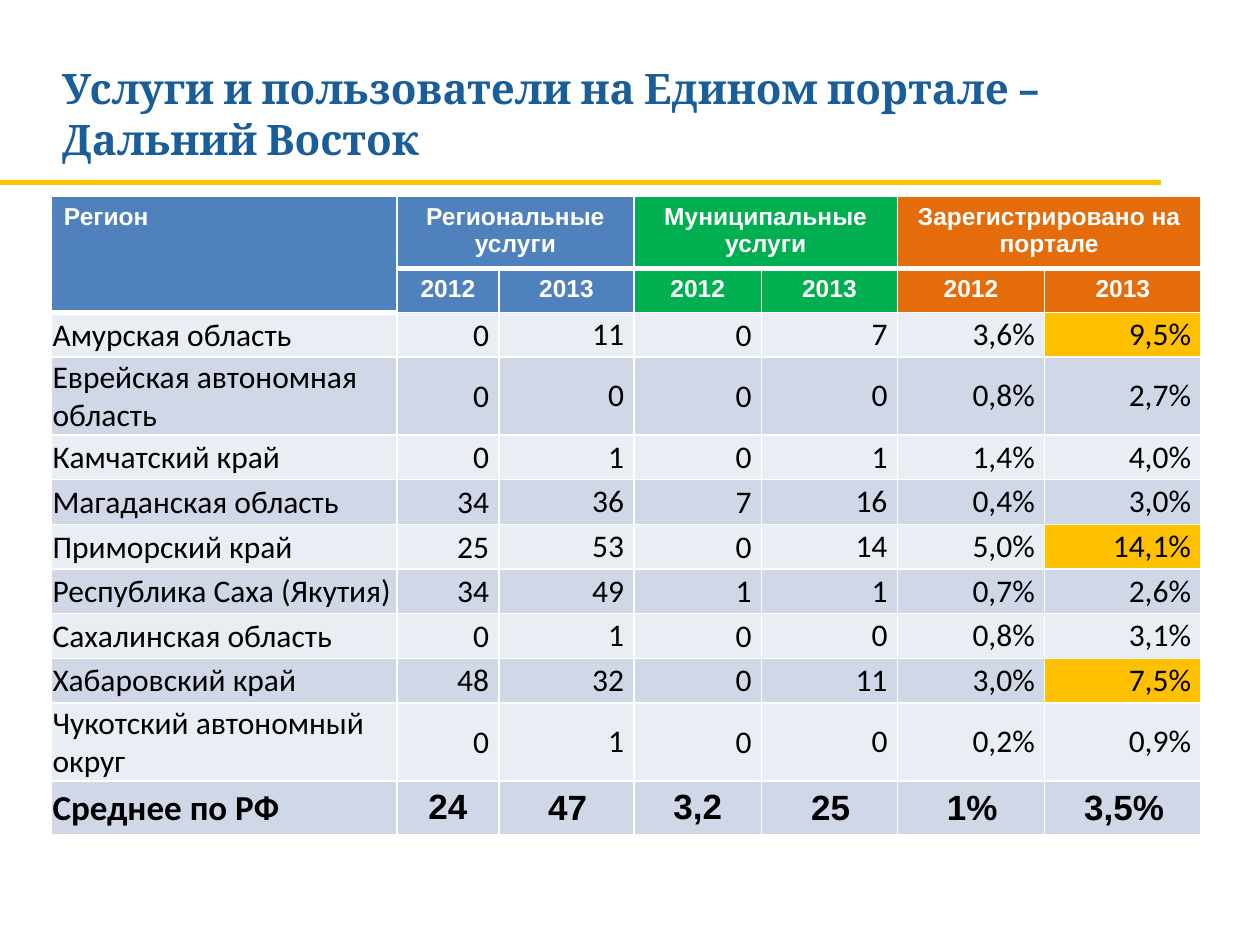
from dataclasses import dataclass
from typing import Optional

from lxml.etree import SubElement
from pptx import Presentation
from pptx.dml.color import RGBColor
from pptx.enum.shapes import MSO_CONNECTOR
from pptx.enum.text import MSO_ANCHOR, MSO_AUTO_SIZE, PP_ALIGN
from pptx.oxml.ns import qn
from pptx.util import Cm, Pt


@dataclass(frozen=True)
class Theme:
    title: str = "1A5E99"
    accent: str = "FFC000"
    blue: str = "4F81BD"
    green: str = "00B050"
    orange: str = "E46C0A"
    light_band: str = "E9EDF4"
    dark_band: str = "D0D8E8"
    white: str = "FFFFFF"
    black: str = "000000"
    title_size: int = 24
    header_size: int = 14
    body_size: int = 18
    total_size: int = 20


THEME = Theme()


@dataclass(frozen=True)
class TextStyle:
    font: str
    size: int
    color: str
    bold: bool = False
    align: PP_ALIGN = PP_ALIGN.LEFT


@dataclass(frozen=True)
class CellStyle:
    text: TextStyle
    anchor: MSO_ANCHOR = MSO_ANCHOR.TOP
    # Left, top, right and bottom insets in centimetres
    margins: tuple = (0.25, 0.13, 0.25, 0.13)
    bottom_border: int = 1


@dataclass(frozen=True)
class HeaderGroup:
    name: str
    color: str


@dataclass(frozen=True)
class Region:
    name: str
    values: tuple
    highlighted: bool = False


GROUPS = [
    HeaderGroup("Региональные услуги", THEME.blue),
    HeaderGroup("Муниципальные услуги", THEME.green),
    HeaderGroup("Зарегистрировано на портале", THEME.orange),
]
YEARS = ("2012", "2013")
REGIONS = [
    Region("Амурская область", ("0", "11", "0", "7", "3,6%", "9,5%"), True),
    Region("Еврейская автономная область", ("0", "0", "0", "0", "0,8%", "2,7%")),
    Region("Камчатский край", ("0", "1", "0", "1", "1,4%", "4,0%")),
    Region("Магаданская область", ("34", "36", "7", "16", "0,4%", "3,0%")),
    Region("Приморский край", ("25", "53", "0", "14", "5,0%", "14,1%"), True),
    Region("Республика Саха (Якутия)", ("34", "49", "1", "1", "0,7%", "2,6%")),
    Region("Сахалинская область", ("0", "1", "0", "0", "0,8%", "3,1%")),
    Region("Хабаровский край", ("48", "32", "0", "11", "3,0%", "7,5%"), True),
    Region("Чукотский автономный округ", ("0", "1", "0", "0", "0,2%", "0,9%")),
]
AVERAGE = Region("Среднее по РФ", ("24", "47", "3,2", "25", "1%", "3,5%"))

COLUMN_WIDTHS = (6.96, 2.06, 2.72, 2.57, 2.74, 2.97, 3.15)
HEADER_HEIGHTS = (1.45, 0.89)
ROW_HEIGHT, WRAPPED_HEIGHT, AVERAGE_HEIGHT = 0.9, 1.55, 1.09
WRAP_LENGTH = 25

# Text and cell styles
TITLE_TEXT = TextStyle("Cambria", THEME.title_size, THEME.title, True)
HEADER_LEFT = TextStyle("Arial", THEME.header_size, THEME.white, True)
HEADER_CENTER = TextStyle("Arial", THEME.header_size, THEME.white, True, PP_ALIGN.CENTER)
NAME_TEXT = TextStyle("Calibri", THEME.body_size, THEME.black)
VALUE_TEXT = TextStyle("Calibri", THEME.body_size, THEME.black, align=PP_ALIGN.RIGHT)
TOTAL_NAME_TEXT = TextStyle("Calibri", THEME.total_size, THEME.black, True)
TOTAL_TEXT = TextStyle("Arial", THEME.total_size, THEME.black, True, PP_ALIGN.CENTER)

NAME_MARGINS = (0.02, 0.02, 0.02, 0)
REGION_HEADER = CellStyle(HEADER_LEFT, bottom_border=3)
GROUP_HEADER = CellStyle(HEADER_CENTER, bottom_border=3)
YEAR_HEADER = CellStyle(HEADER_CENTER)
NAME_CELL = CellStyle(NAME_TEXT, MSO_ANCHOR.MIDDLE, NAME_MARGINS)
INSET_VALUE = CellStyle(VALUE_TEXT, MSO_ANCHOR.MIDDLE, (0.02, 0.02, 0.2, 0))
VALUE_CELL = CellStyle(VALUE_TEXT, MSO_ANCHOR.MIDDLE, (0, 0, 0.2, 0))
TOTAL_NAME = CellStyle(TOTAL_NAME_TEXT, MSO_ANCHOR.MIDDLE, NAME_MARGINS)
TOTAL_TOP = CellStyle(TOTAL_TEXT)
TOTAL_MIDDLE = CellStyle(TOTAL_TEXT, MSO_ANCHOR.MIDDLE, (0.25, 0.13, 0.2, 0.13))


def write_text(text_frame, text: str, style: TextStyle) -> None:
    paragraph = text_frame.paragraphs[0]
    paragraph.alignment = style.align
    run = paragraph.add_run()
    run.text = text
    run.font.name = style.font
    run.font.size = Pt(style.size)
    run.font.bold = style.bold
    run.font.color.rgb = RGBColor.from_string(style.color)


def set_borders(cell, bottom: int) -> None:
    properties = cell._tc.get_or_add_tcPr()
    for side, width in (("L", 1), ("R", 1), ("T", 1), ("B", bottom)):
        line = SubElement(properties, qn(f"a:ln{side}"), w=str(Pt(width)))
        SubElement(SubElement(line, qn("a:solidFill")), qn("a:srgbClr"), val=THEME.white)


def fill_cell(cell, text: Optional[str], color: str, style: CellStyle) -> None:
    set_borders(cell, style.bottom_border)
    cell.fill.solid()
    cell.fill.fore_color.rgb = RGBColor.from_string(color)
    cell.vertical_anchor = style.anchor
    (cell.margin_left, cell.margin_top,
     cell.margin_right, cell.margin_bottom) = map(Cm, style.margins)
    if text:
        write_text(cell.text_frame, text, style.text)


def draw_title(slide, text: str) -> None:
    title = slide.shapes.title
    title.left, title.top, title.width, title.height = Cm(1), Cm(1.14), Cm(22.4), Cm(2.31)
    text_frame = title.text_frame
    text_frame.word_wrap = True
    text_frame.auto_size = MSO_AUTO_SIZE.NONE
    text_frame.vertical_anchor = MSO_ANCHOR.TOP
    write_text(text_frame, text, TITLE_TEXT)


def draw_rule(slide) -> None:
    rule = slide.shapes.add_connector(
        MSO_CONNECTOR.STRAIGHT, Cm(0), Cm(3.68), Cm(23.4), Cm(3.68))
    rule.line.color.rgb = RGBColor.from_string(THEME.accent)
    rule.line.width = Pt(2.5)
    SubElement(rule._element.spPr, qn("a:effectLst"))


def draw_header(table) -> None:
    fill_cell(table.cell(0, 0), "Регион", THEME.blue, REGION_HEADER)
    fill_cell(table.cell(1, 0), None, THEME.blue, REGION_HEADER)
    table.cell(0, 0).merge(table.cell(1, 0))
    for index, group in enumerate(GROUPS):
        first = 1 + index * len(YEARS)
        for offset, year in enumerate(YEARS):
            label = None if offset else group.name
            fill_cell(table.cell(0, first + offset), label, group.color, GROUP_HEADER)
            fill_cell(table.cell(1, first + offset), year, group.color, YEAR_HEADER)
        table.cell(0, first).merge(table.cell(0, first + 1))


def draw_row(table, row: int, region: Region, name_style: CellStyle,
             inset_style: CellStyle, value_style: CellStyle) -> None:
    band = THEME.dark_band if row % 2 else THEME.light_band
    fill_cell(table.cell(row, 0), region.name, band, name_style)
    for column, value in enumerate(region.values, start=1):
        style = inset_style if column in (1, 3) else value_style
        is_last = column == len(region.values)
        color = THEME.accent if region.highlighted and is_last else band
        fill_cell(table.cell(row, column), value, color, style)


def draw_table(slide) -> None:
    heights = [*HEADER_HEIGHTS]
    heights += [WRAPPED_HEIGHT if len(region.name) > WRAP_LENGTH else ROW_HEIGHT
                for region in REGIONS]
    heights.append(AVERAGE_HEIGHT)
    table = slide.shapes.add_table(
        len(heights), len(COLUMN_WIDTHS), Cm(1.04), Cm(3.96),
        Cm(sum(COLUMN_WIDTHS)), Cm(sum(heights))).table
    table.first_row = table.horz_banding = False
    for column, width in zip(table.columns, COLUMN_WIDTHS):
        column.width = Cm(width)
    for row, height in zip(table.rows, heights):
        row.height = Cm(height)

    draw_header(table)
    for row, region in enumerate(REGIONS, start=len(HEADER_HEIGHTS)):
        draw_row(table, row, region, NAME_CELL, INSET_VALUE, VALUE_CELL)
    draw_row(table, len(heights) - 1, AVERAGE, TOTAL_NAME, TOTAL_TOP, TOTAL_MIDDLE)


def main() -> None:
    presentation = Presentation()
    presentation.slide_width, presentation.slide_height = Cm(25.4), Cm(19.05)
    slide = presentation.slides.add_slide(presentation.slide_layouts[5])
    draw_title(slide, "Услуги и пользователи на Едином портале – Дальний Восток")
    draw_rule(slide)
    draw_table(slide)
    presentation.save("out.pptx")


if __name__ == "__main__":
    main()
